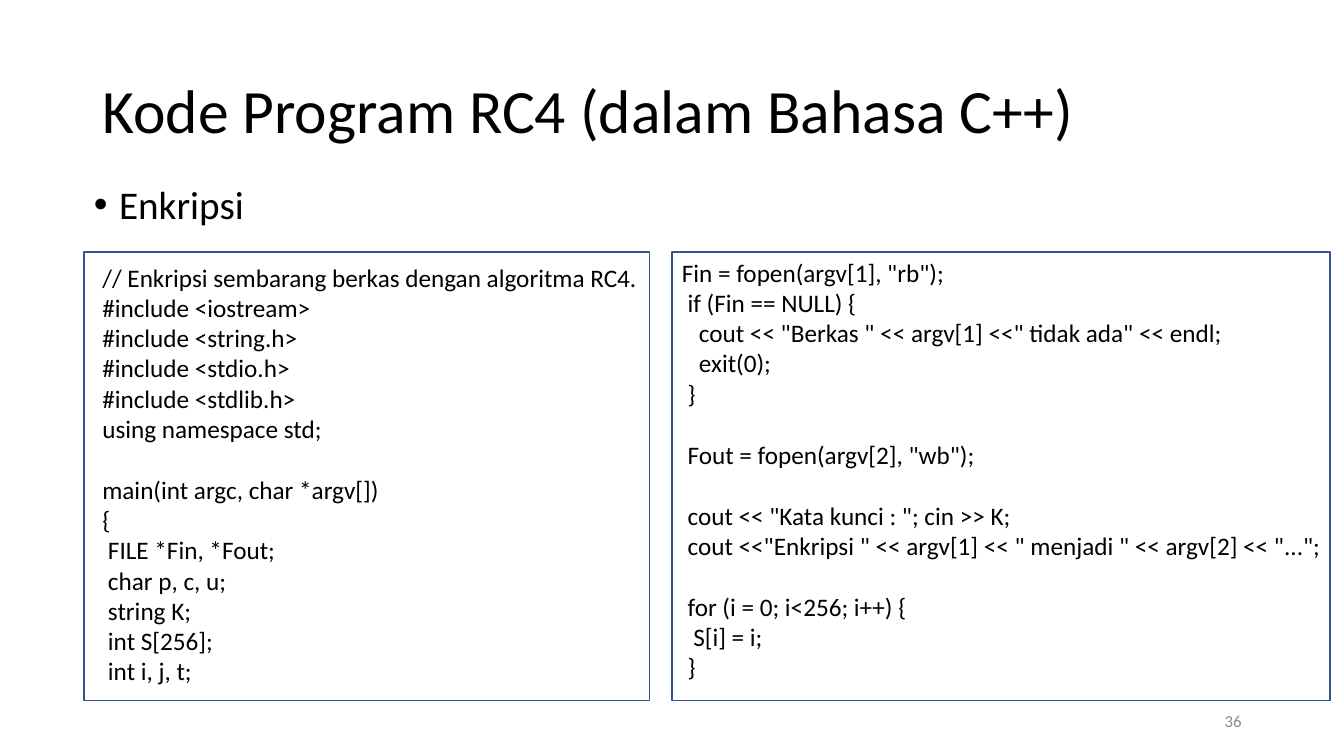
import pptx
import pptx.dml.color
import pptx.enum.shapes
import pptx.enum.text
import pptx.oxml
import pptx.oxml.ns
import pptx.util

Pt = pptx.util.Pt
ALIGN = pptx.enum.text.PP_ALIGN
ANCHOR = pptx.enum.text.MSO_ANCHOR

HEADING = "Kode Program RC4 (dalam Bahasa C++)"
TOPIC = "Enkripsi"
PAGE_NUMBER = "36"
SETUP_CODE = """// Enkripsi sembarang berkas dengan algoritma RC4.
#include <iostream>
#include <string.h>
#include <stdio.h>
#include <stdlib.h>
using namespace std;

main(int argc, char *argv[])
{
 FILE *Fin, *Fout;
 char p, c, u;
 string K;
 int S[256];
 int i, j, t;"""
FILE_CODE = """Fin = fopen(argv[1], "rb");
 if (Fin == NULL) {
   cout << "Berkas " << argv[1] <<" tidak ada" << endl;
   exit(0);
 }

 Fout = fopen(argv[2], "wb");

 cout << "Kata kunci : "; cin >> K;
 cout <<"Enkripsi " << argv[1] << " menjadi " << argv[2] << "...";

 for (i = 0; i<256; i++) {
  S[i] = i;
 }"""

FONT = "Calibri"
COLORS = {"text": "000000", "page": "8C8C8C", "frame": "325491"}
CODE_SIZE = 18
CODE_LINE = 22  # height of one code line
FRAME_TOP, FRAME_HEIGHT = 180, 320.4

# code, (left, top, width, height) of its text, (left, width) of its frame
CODE_PANELS = [
    (SETUP_CODE, (66, 183.6, 480, 356.4), (60, 404)),
    (FILE_CODE, (480, 180, 480, 312.5), (480, 470)),
]


def rgb(name):
    return pptx.dml.color.RGBColor.from_string(COLORS[name])


def style(paragraph, size, color="text", align=ALIGN.LEFT):
    paragraph.alignment = align
    paragraph.font.name = FONT
    paragraph.font.size = Pt(size)
    paragraph.font.color.rgb = rgb(color)


def add_text_frame(slide, box, anchor=ANCHOR.TOP):
    frame = slide.shapes.add_textbox(*map(Pt, box)).text_frame
    frame.word_wrap = True
    frame.vertical_anchor = anchor
    return frame


def add_heading(slide):
    title = slide.shapes.title
    title.left, title.top, title.width, title.height = map(Pt, (66, 28.8, 828, 104.4))
    title.text_frame.text = HEADING
    title.text_frame.auto_size = pptx.enum.text.MSO_AUTO_SIZE.NONE
    title.text_frame.vertical_anchor = ANCHOR.MIDDLE
    line = title.text_frame.paragraphs[0]
    line.line_spacing = 0.9
    style(line, 44)


def add_topic(slide):
    topic = add_text_frame(slide, (60, 129, 828, 46)).paragraphs[0]
    topic.text = TOPIC
    topic.line_spacing = 0.9
    properties = topic._p.get_or_add_pPr()
    properties.set("marL", str(Pt(18)))
    properties.set("indent", str(-Pt(18)))
    namespace = pptx.oxml.ns.nsdecls("a")
    for bullet in (f'<a:buFont {namespace} typeface="Arial"/>',
                   f'<a:buChar {namespace} char="•"/>'):
        properties.append(pptx.oxml.parse_xml(bullet))
    style(topic, 28)


def add_code(slide, code, box):
    """Each blank code line becomes space before the line that follows it."""
    frame = add_text_frame(slide, box)
    line = frame.paragraphs[0]
    for block_index, block in enumerate(code.split("\n\n")):
        for line_index, text in enumerate(block.split("\n")):
            if block_index or line_index:
                line = frame.add_paragraph()
            if block_index and not line_index:
                line.space_before = Pt(CODE_LINE)
            line.text = text
            style(line, CODE_SIZE)


def add_code_frame(slide, left, width):
    border = slide.shapes.add_shape(
        pptx.enum.shapes.MSO_SHAPE.RECTANGLE,
        Pt(left), Pt(FRAME_TOP), Pt(width), Pt(FRAME_HEIGHT))
    border.shadow.inherit = False
    border.fill.background()
    border.line.color.rgb = rgb("frame")
    border.line.width = Pt(1)


def main():
    deck = pptx.Presentation()
    deck.slide_width, deck.slide_height = Pt(960), Pt(540)
    slide = deck.slides.add_slide(deck.slide_layouts.get_by_name("Title Only"))

    add_heading(slide)
    add_topic(slide)
    page = add_text_frame(slide, (678, 500.4, 216, 28.8), ANCHOR.MIDDLE).paragraphs[0]
    page.text = PAGE_NUMBER
    style(page, 12, "page", ALIGN.RIGHT)

    for code, text_box, _ in CODE_PANELS:
        add_code(slide, code, text_box)
    for _, _, (left, width) in CODE_PANELS:
        add_code_frame(slide, left, width)

    deck.save("out.pptx")


if __name__ == "__main__":
    main()
